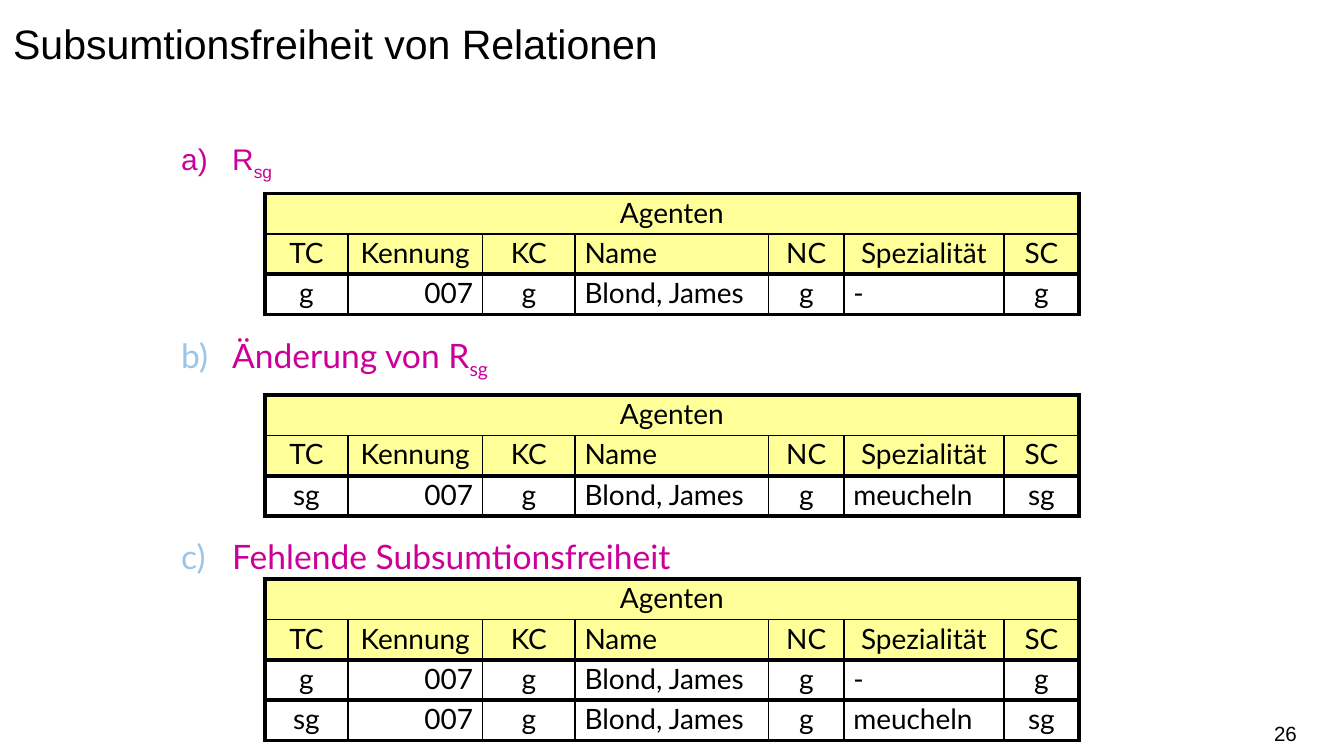
"""Build a slide that shows subsumption-free relations with three tables."""
from dataclasses import dataclass

from lxml import etree
from pptx import Presentation
from pptx.dml.color import RGBColor
from pptx.enum.text import MSO_ANCHOR, PP_ALIGN
from pptx.oxml.ns import qn
from pptx.util import Inches, Pt

LEFT, CENTER, RIGHT = PP_ALIGN.LEFT, PP_ALIGN.CENTER, PP_ALIGN.RIGHT
TOP, MIDDLE = MSO_ANCHOR.TOP, MSO_ANCHOR.MIDDLE


@dataclass(frozen=True)
class Theme:
    """Hold the colours, fonts and sizes of the slide."""
    black: str = "000000"
    magenta: str = "CC0099"
    light_blue: str = "98C6EA"
    yellow: str = "FFFF99"
    sans: str = "Arial"
    lato: str = "Lato"
    title_size: float = 22
    first_label_size: float = 16
    label_size: float = 18
    cell_size: float = 15
    number_size: float = 11
    thin: float = 1
    thick: float = 2.25


THEME = Theme()
SLIDE_WIDTH = 10
SLIDE_HEIGHT = SLIDE_WIDTH * 9 / 16
COLUMN_WIDTHS = [0.62, 1, 0.69, 1.44, 0.56, 1.19, 0.56]
ROW_HEIGHT = 0.3
HEADERS = ["TC", "Kennung", "KC", "Name", "NC", "Spezialität", "SC"]
HEADER_ALIGNS = [CENTER, CENTER, CENTER, LEFT, CENTER, CENTER, CENTER]
BODY_ALIGNS = [CENTER, RIGHT, CENTER, LEFT, CENTER, LEFT, CENTER]
WITHOUT_SPECIALITY = ["g", "007", "g", "Blond, James", "g", "-", "g"]
WITH_SPECIALITY = ["sg", "007", "g", "Blond, James", "g", "meucheln", "sg"]


def add_run(paragraph, text, size, font, color, baseline=None):
    """Append one formatted run, lowered if a baseline is given."""
    run = paragraph.add_run()
    run.text = text
    run.font.size = Pt(size)
    run.font.name = font
    run.font.color.rgb = RGBColor.from_string(color)
    if baseline is not None:
        run.font._element.set("baseline", str(baseline))


def add_text_box(slide, left, top, width, height, anchor=TOP):
    """Add a wrapping text box and return its text frame."""
    frame = slide.shapes.add_textbox(
        Inches(left), Inches(top), Inches(width), Inches(height)).text_frame
    frame.word_wrap = True
    frame.vertical_anchor = anchor
    return frame


def add_title(slide, text):
    """Add the slide title."""
    paragraph = add_text_box(slide, 0, 0, SLIDE_WIDTH, 0.94).paragraphs[0]
    paragraph.line_spacing = 1.25
    add_run(paragraph, text, THEME.title_size, THEME.sans, THEME.black)


def add_label(slide, top, height, number, text, subscript, size, font, marker_color):
    """Add a lettered label with an optional subscript."""
    paragraph = add_text_box(slide, 1.25, top, 7.5, height).paragraphs[0]
    properties = paragraph._p.get_or_add_pPr()
    properties.set("marL", str(Inches(0.38)))
    properties.set("indent", str(Inches(-0.38)))
    marker = etree.SubElement(properties, qn("a:buClr"))
    etree.SubElement(marker, qn("a:srgbClr"), val=marker_color)
    etree.SubElement(properties, qn("a:buFont"), typeface=font)
    etree.SubElement(properties, qn("a:buAutoNum"),
                     type="alphaLcParenR", startAt=str(number))
    add_run(paragraph, text, size, font, THEME.magenta)
    if subscript:
        add_run(paragraph, subscript, size, font, THEME.magenta, -25000)


def set_borders(cell, **widths):
    """Draw the sides L, R, T and B of a cell at the given widths."""
    properties = cell._tc.get_or_add_tcPr()
    for side, width in widths.items():
        line = etree.SubElement(properties, qn(f"a:ln{side}"), w=str(Pt(width)))
        fill = etree.SubElement(line, qn("a:solidFill"))
        etree.SubElement(fill, qn("a:srgbClr"), val=THEME.black)


def format_cell(cell, row, column):
    """Set the borders, fill and margins that follow from a cell's place."""
    thin, thick = THEME.thin, THEME.thick
    set_borders(
        cell,
        L=thick if row == 0 or column == 0 else thin,
        R=thick if row == 0 or column == len(HEADERS) - 1 else thin,
        T=thin if row == 1 else thick,
        B=thin if row == 0 else thick)
    if row < 2:
        cell.fill.solid()
        cell.fill.fore_color.rgb = RGBColor.from_string(THEME.yellow)
    else:
        cell.fill.background()
    cell.margin_left = cell.margin_right = Inches(0.07)
    cell.margin_top = Inches(0.04)
    cell.margin_bottom = Inches(0.03)


def write_cell(cell, text, align):
    """Write the text of one cell."""
    paragraph = cell.text_frame.paragraphs[0]
    paragraph.alignment = align
    paragraph.line_spacing = 0.9
    add_run(paragraph, text, THEME.cell_size, THEME.lato, THEME.black)


def add_relation(slide, top, agents):
    """Add a table with a spanning name, a header row and the agents."""
    row_count = len(agents) + 2
    table = slide.shapes.add_table(
        row_count, len(HEADERS), Inches(1.97), Inches(top),
        Inches(sum(COLUMN_WIDTHS)), Inches(ROW_HEIGHT * row_count)).table
    table.first_row = table.horz_banding = False
    for column, width in zip(table.columns, COLUMN_WIDTHS):
        column.width = Inches(width)
    for row_index, row in enumerate(table.rows):
        row.height = Inches(ROW_HEIGHT)
        for column_index, cell in enumerate(row.cells):
            format_cell(cell, row_index, column_index)
    table.cell(0, 0).merge(table.cell(0, len(HEADERS) - 1))
    write_cell(table.cell(0, 0), "Agenten", CENTER)
    for row_index, values in enumerate([HEADERS, *agents], start=1):
        aligns = HEADER_ALIGNS if row_index == 1 else BODY_ALIGNS
        for column_index, (value, align) in enumerate(zip(values, aligns)):
            write_cell(table.cell(row_index, column_index), value, align)


def add_slide_number(slide, number):
    """Add the slide number at the lower right."""
    frame = add_text_box(slide, 7.41, 5.31, 2.24, 0.3, MIDDLE)
    frame.margin_left = frame.margin_right = 0
    paragraph = frame.paragraphs[0]
    paragraph.alignment = RIGHT
    add_run(paragraph, number, THEME.number_size, THEME.sans, THEME.black)


def main():
    """Build and save the slide."""
    presentation = Presentation()
    presentation.slide_width = Inches(SLIDE_WIDTH)
    presentation.slide_height = Inches(SLIDE_HEIGHT)
    slide = presentation.slides.add_slide(presentation.slide_layouts[6])
    add_title(slide, "Subsumtionsfreiheit von Relationen")
    add_label(slide, 1, 0.48, 1, "R", "sg",
              THEME.first_label_size, THEME.sans, THEME.magenta)
    add_relation(slide, 1.44, [WITHOUT_SPECIALITY])
    add_label(slide, 2.44, 0.4, 2, "Änderung von R", "sg",
              THEME.label_size, THEME.lato, THEME.light_blue)
    add_relation(slide, 2.94, [WITH_SPECIALITY])
    add_label(slide, 3.94, 0.4, 3, "Fehlende Subsumtionsfreiheit", "",
              THEME.label_size, THEME.lato, THEME.light_blue)
    add_relation(slide, 4.31, [WITHOUT_SPECIALITY, WITH_SPECIALITY])
    add_slide_number(slide, "26")
    presentation.save("out.pptx")


if __name__ == "__main__":
    main()
